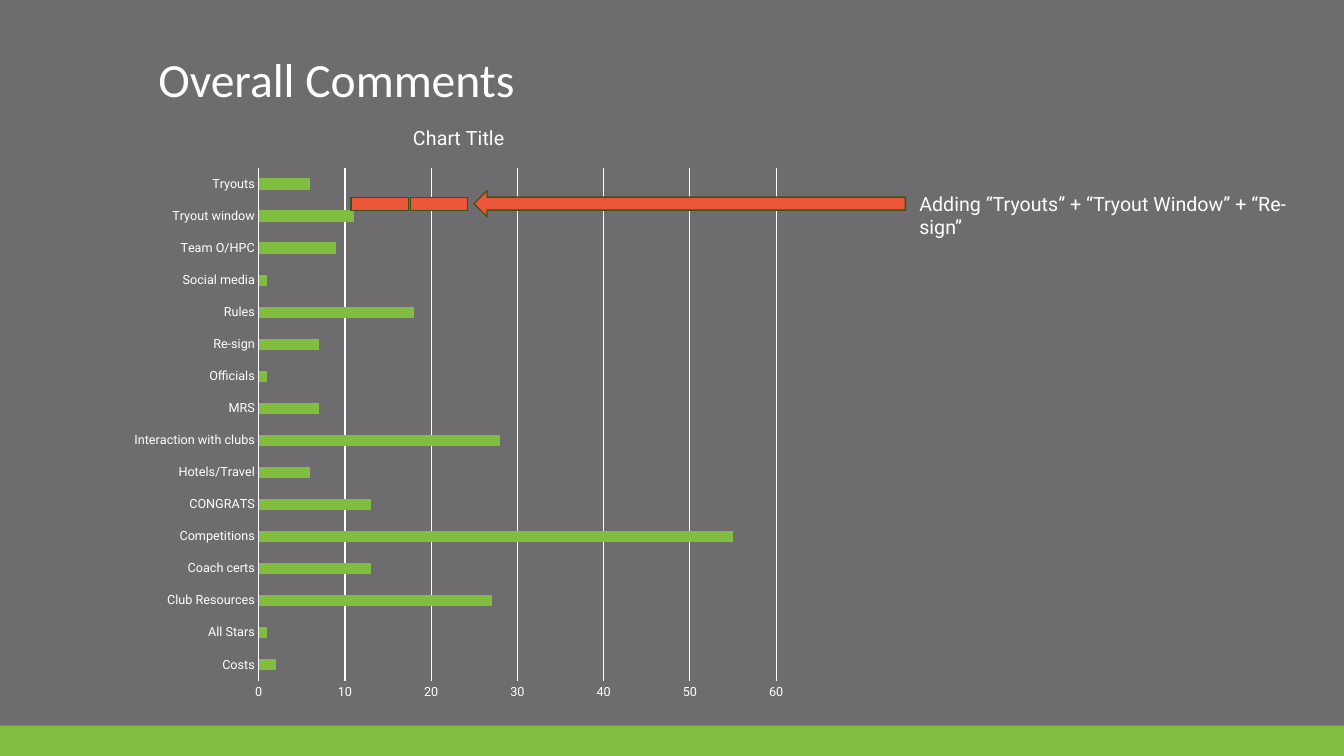
from lxml import etree
from pptx import Presentation
from pptx import util as u
from pptx.chart import data as chart_data
from pptx.dml.color import RGBColor
from pptx.enum import chart as charts, shapes, text
from pptx.oxml import ns

WIDTH, HEIGHT = 13.33, 7.5
GREY = RGBColor(0x6F, 0x6C, 0x6F)
GREEN = RGBColor(0x81, 0xBD, 0x41)
DARK_GREEN = RGBColor(0x39, 0x53, 0x1C)
ORANGE = RGBColor(0xEB, 0x56, 0x38)
WHITE = RGBColor(0xFF, 0xFF, 0xFF)

COMMENTS = {
    "Costs": 2, "All Stars": 1, "Club Resources": 27, "Coach certs": 13,
    "Competitions": 55, "CONGRATS": 13, "Hotels/Travel": 6,
    "Interaction with clubs": 28, "MRS": 7, "Officials": 1, "Re-sign": 7,
    "Rules": 18, "Social media": 1, "Team O/HPC": 9, "Tryout window": 11,
    "Tryouts": 6,
}
# Plot area as shares of the chart's size
PLOT_SHARES = {"x": 0.204, "y": 0.107, "w": 0.766, "h": 0.841}


def inches(box):
    return [u.Inches(length) for length in box]


def format_font(font, size, name="Roboto", color=WHITE):
    font.size = u.Pt(size)
    font.name = name
    font.bold = False
    font.color.rgb = color


def write_text(frame, content, size, name="Roboto", spacing=1.0):
    frame.word_wrap = True
    frame.auto_size = text.MSO_AUTO_SIZE.NONE
    frame.vertical_anchor = text.MSO_ANCHOR.TOP
    paragraph = frame.paragraphs[0]
    paragraph.text = content
    paragraph.alignment = text.PP_ALIGN.LEFT
    paragraph.line_spacing = spacing
    format_font(paragraph.runs[0].font, size, name)


def add_block(slide, kind, box, fill, line=None):
    shape = slide.shapes.add_shape(kind, *inches(box))
    shape.shadow.inherit = False
    shape.fill.solid()
    shape.fill.fore_color.rgb = fill
    if line is None:
        shape.line.fill.background()
    else:
        shape.line.color.rgb = line
        shape.line.width = u.Pt(1)
    return shape


def set_plot_layout(chart):
    plot_area = chart._chartSpace.chart.plotArea
    for old in plot_area.findall(ns.qn("c:layout")):
        plot_area.remove(old)
    layout = etree.Element(ns.qn("c:layout"))
    manual = etree.SubElement(layout, ns.qn("c:manualLayout"))
    settings = {"layoutTarget": "inner", "xMode": "edge", "yMode": "edge"}
    for tag, value in (settings | PLOT_SHARES).items():
        etree.SubElement(manual, ns.qn(f"c:{tag}")).set("val", str(value))
    plot_area.insert(0, layout)


def add_title(slide, box):
    title = slide.shapes.title
    title.left, title.top, title.width, title.height = inches(box)
    write_text(title.text_frame, "Overall Comments", 34, "Calibri", 0.9)


def add_comment_chart(slide, box):
    data = chart_data.CategoryChartData()
    data.categories = list(COMMENTS)
    data.add_series("Series 1", list(COMMENTS.values()))
    chart = slide.shapes.add_chart(
        charts.XL_CHART_TYPE.BAR_CLUSTERED, *inches(box), data).chart
    format_font(chart.font, 10)
    chart.has_legend = False
    chart.has_title = True
    write_text(chart.chart_title.text_frame, "Chart Title", 14)
    chart.chart_title.include_in_layout = False
    set_plot_layout(chart)

    # Bars
    plot = chart.plots[0]
    plot.gap_width = 182
    plot.vary_by_categories = False
    bars = plot.series[0].format.fill
    bars.solid()
    bars.fore_color.rgb = GREEN

    # Axes and gridlines
    categories, values = chart.category_axis, chart.value_axis
    for axis in (categories, values):
        axis.major_tick_mark = axis.minor_tick_mark = charts.XL_TICK_MARK.NONE
        format_font(axis.tick_labels.font, 9)
    values.minimum_scale, values.maximum_scale, values.major_unit = 0, 60, 10
    values.has_major_gridlines = True
    values.format.line.fill.background()
    for line in (categories.format.line, values.major_gridlines.format.line):
        line.color.rgb = WHITE
        line.width = u.Pt(0.75)


def add_tryout_callout(slide, box):
    left, top, width, height = box
    # Two bar extensions, one for each added category
    for column in range(2):
        add_block(slide, shapes.MSO_SHAPE.RECTANGLE,
                  (left + 0.59 * column, top + 0.11, 0.57, 0.13),
                  ORANGE, DARK_GREEN)
    # Arrow pointing back at the extensions
    arrow = add_block(slide, shapes.MSO_SHAPE.RIGHT_ARROW,
                      (left + 1.22, top + 0.04, 4.28, 0.26),
                      ORANGE, DARK_GREEN)
    arrow.rotation = 180
    # Explanation
    label_left = left + 5.54
    label = slide.shapes.add_textbox(
        *inches((label_left, top, left + width - label_left, height)))
    write_text(label.text_frame,
               "Adding “Tryouts” + “Tryout Window” + “Re-sign”", 14)


def build_comments_slide(presentation):
    slide = presentation.slides.add_slide(presentation.slide_layouts[5])
    slide.background.fill.solid()
    slide.background.fill.fore_color.rgb = GREY
    add_block(slide, shapes.MSO_SHAPE.RECTANGLE,
              (0, 0.96 * HEIGHT, WIDTH, 0.04 * HEIGHT), GREEN)
    add_title(slide, (1.47, 0.51, 10.4, 1.35))
    add_comment_chart(slide, (1.2, 1.02, 6.7, 6.05))
    add_tryout_callout(slide, (3.48, 1.85, 9.77, 0.34))


def main():
    presentation = Presentation()
    presentation.slide_width = u.Inches(WIDTH)
    presentation.slide_height = u.Inches(HEIGHT)
    build_comments_slide(presentation)
    presentation.save("out.pptx")


if __name__ == "__main__":
    main()
